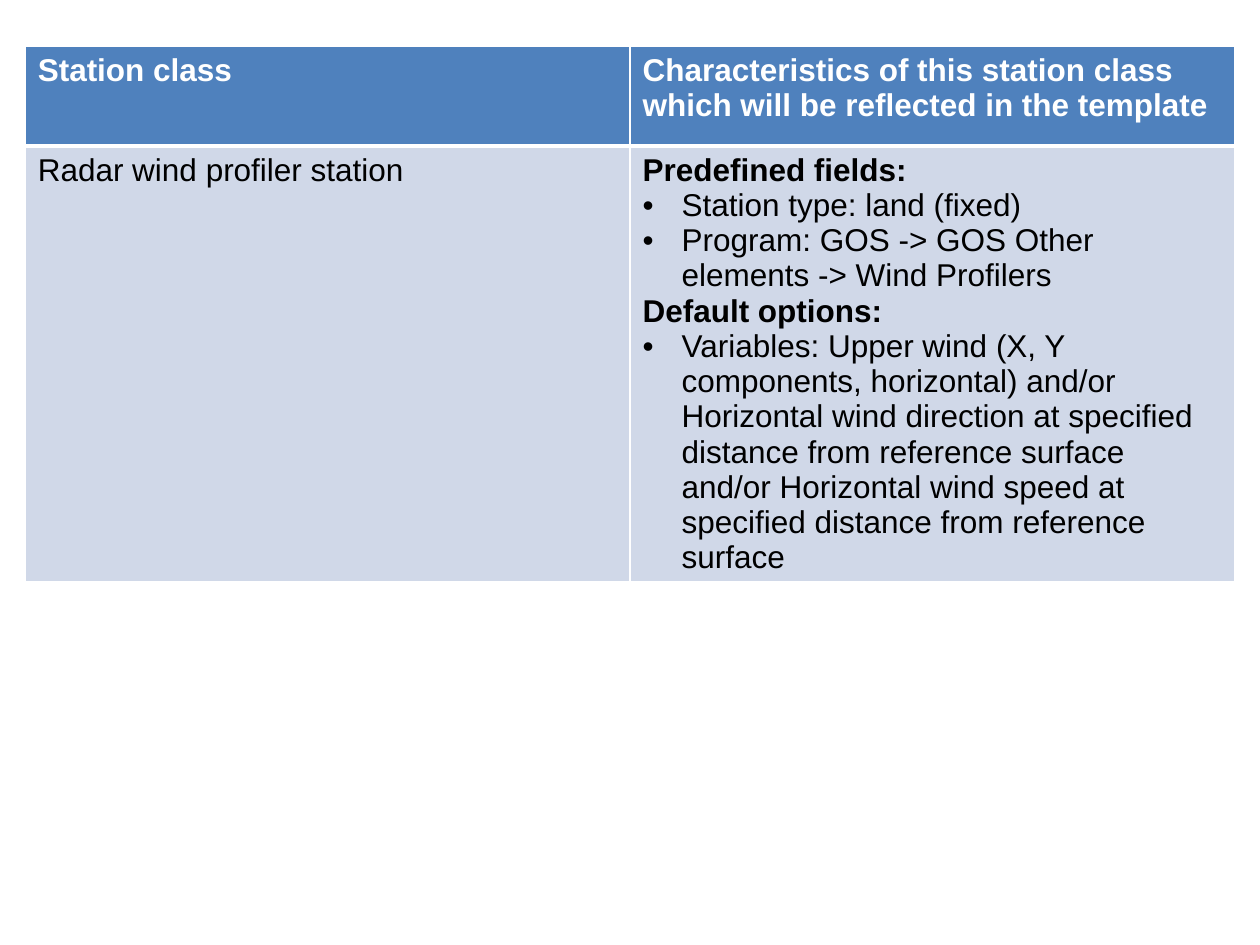
from dataclasses import dataclass

from lxml.etree import SubElement as Sub
from pptx import Presentation
from pptx.dml.color import RGBColor as RGB
from pptx.oxml.ns import qn
from pptx.util import Inches, Pt


@dataclass(frozen=True)
class Theme:
    font: str = "Arial"
    size: int = 18
    white: str = "FFFFFF"
    black: str = "000000"
    head: str = "4F81BD"
    body: str = "D0D8E8"
    thin: int = 1
    thick: int = 3


@dataclass(frozen=True)
class Line:
    text: str
    bold: bool = False
    bullet: bool = False


@dataclass(frozen=True)
class Row:
    fill: str
    ink: str
    edges: dict[str, int]
    cells: list[list[Line]]


THEME = Theme()
INDENT = Inches(0.31)
HEIGHT = Inches(0.79)
SIDES = {"L": THEME.thin, "R": THEME.thin}

ROWS = [
    Row(THEME.head, THEME.white, SIDES | {"T": THEME.thin, "B": THEME.thick}, [
        [Line("Station class", bold=True)],
        [Line("Characteristics of this station class which will be "
              "reflected in the template", bold=True)],
    ]),
    Row(THEME.body, THEME.black, SIDES | {"T": THEME.thick, "B": THEME.thin}, [
        [Line("Radar wind profiler station")],
        [
            Line("Predefined fields:", bold=True),
            Line("Station type: land (fixed)", bullet=True),
            Line("Program: GOS -> GOS Other elements -> Wind Profilers", bullet=True),
            Line("Default options:", bold=True),
            Line("Variables: Upper wind (X, Y components, horizontal) and/or "
                 "Horizontal wind direction at specified distance from "
                 "reference surface and/or Horizontal wind speed at specified "
                 "distance from reference surface", bullet=True),
        ],
    ]),
]


def add_edges(cell, edges: dict[str, int]) -> None:
    props = cell._tc.get_or_add_tcPr()
    for side, width in edges.items():
        edge = Sub(props, qn(f"a:ln{side}"), w=str(Pt(width)))
        Sub(Sub(edge, qn("a:solidFill")), qn("a:srgbClr"), val=THEME.white)


def add_bullet(para) -> None:
    props = para._p.get_or_add_pPr()
    props.set("marL", str(INDENT))
    props.set("indent", str(-INDENT))
    Sub(props, qn("a:buFont"), typeface=THEME.font)
    Sub(props, qn("a:buChar"), char="•")


def add_text(frame, lines: list[Line], ink: str) -> None:
    for i, line in enumerate(lines):
        para = frame.add_paragraph() if i else frame.paragraphs[0]
        if line.bullet:
            add_bullet(para)
        run = para.add_run()
        run.text = line.text
        form = {"name": THEME.font, "size": Pt(THEME.size), "bold": line.bold}
        for key, value in form.items():
            setattr(run.font, key, value)
        run.font.color.rgb = RGB.from_string(ink)


def fill_row(cells, row: Row) -> None:
    for cell, lines in zip(cells, row.cells):
        add_edges(cell, row.edges)
        cell.fill.solid()
        cell.fill.fore_color.rgb = RGB.from_string(row.fill)
        add_text(cell.text_frame, lines, row.ink)


def main() -> None:
    deck = Presentation()
    deck.slide_width, deck.slide_height = Inches(10), Inches(7.5)
    slide = deck.slides.add_slide(deck.slide_layouts[6])
    table = slide.shapes.add_table(
        len(ROWS), 2, Inches(0.2), Inches(0.37), Inches(9.6), HEIGHT * len(ROWS)
    ).table
    for cells, row in zip(table.rows, ROWS):
        fill_row(cells.cells, row)
    deck.save("out.pptx")


if __name__ == "__main__":
    main()
